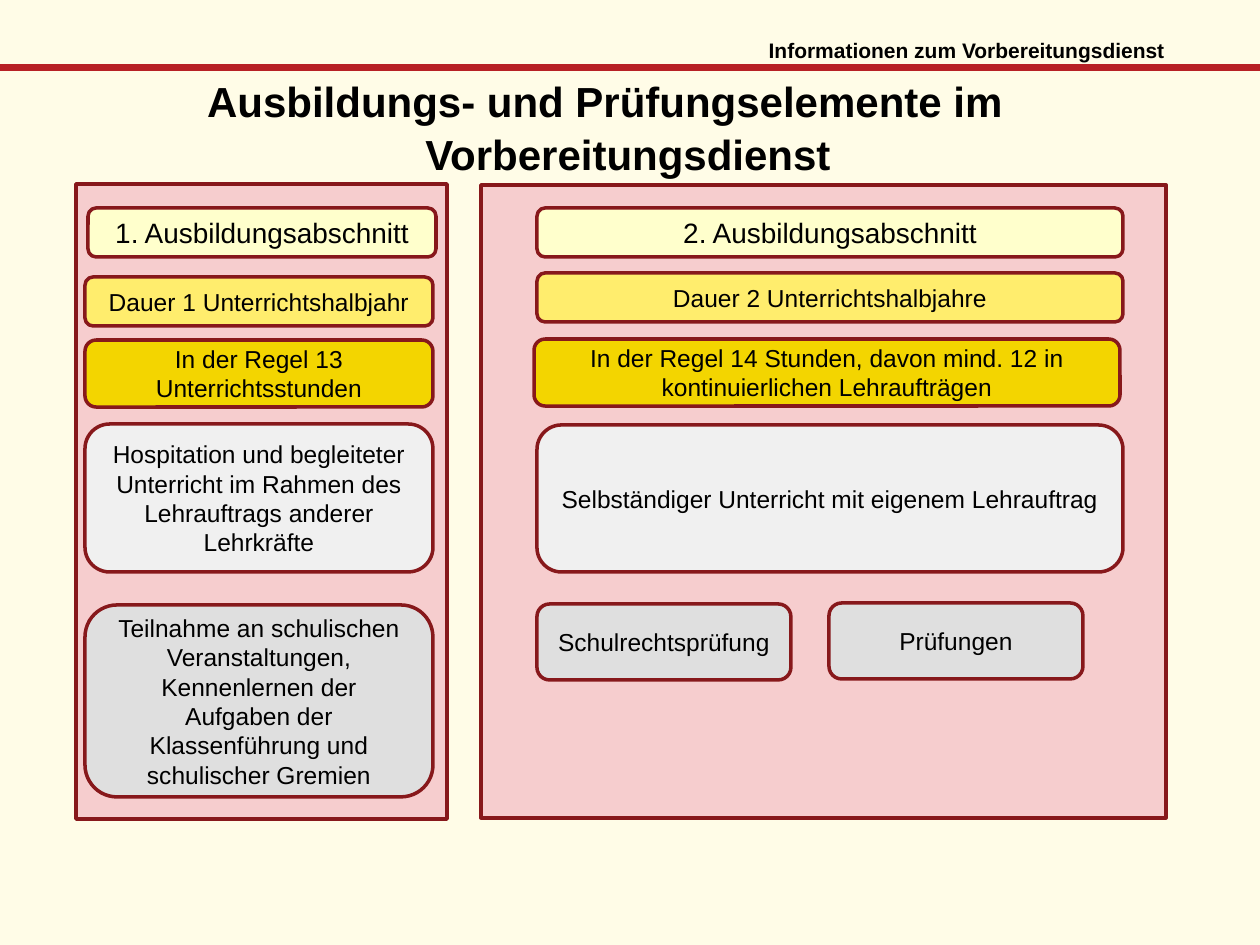
from dataclasses import dataclass

from pptx import Presentation
from pptx.dml.color import RGBColor
from pptx.enum.shapes import MSO_SHAPE
from pptx.enum.text import MSO_ANCHOR, PP_ALIGN
from pptx.util import Emu, Pt

EMU_PER_PX = 914400 / 126
COLORS = {
    "background": "FFFCE7",
    "rule": "B72025",
    "border": "87181B",
    "panel": "F6CDCE",
    "heading": "FFFFCC",
    "duration": "FFED6D",
    "hours": "F3D500",
    "teaching": "F0F0F0",
    "extra": "DFDFDF",
    "text": "000000",
}


@dataclass(frozen=True)
class Area:
    left: int
    top: int
    width: int
    height: int


@dataclass(frozen=True)
class Box:
    area: Area
    fill: str
    text: str = ""
    size: int = 14
    shape: MSO_SHAPE = MSO_SHAPE.ROUNDED_RECTANGLE
    border: str = "border"
    border_width: float = 2


@dataclass(frozen=True)
class Line:
    """A text line, with its left and right indents in px."""
    text: str
    left: int = 0
    right: int = 0


LEFT, RIGHT = 85, 537
NARROW, WIDE, EXAM = 348, 586, 254

BOXES = [
    Box(Area(0, 65, 1260, 5), "rule", shape=MSO_SHAPE.RECTANGLE, border="rule", border_width=0.75),
    Box(Area(481, 185, 685, 633), "panel", shape=MSO_SHAPE.RECTANGLE),
    Box(Area(76, 184, 371, 635), "panel", shape=MSO_SHAPE.RECTANGLE),
    Box(Area(88, 208, NARROW, 49), "heading", "1. Ausbildungsabschnitt", 16),
    Box(Area(RIGHT, 208, WIDE, 49), "heading", "2. Ausbildungsabschnitt", 16),
    Box(Area(LEFT, 277, NARROW, 49), "duration", "Dauer 1 Unterrichtshalbjahr"),
    Box(Area(RIGHT, 273, WIDE, 49), "duration", "Dauer 2 Unterrichtshalbjahre"),
    Box(Area(LEFT, 340, NARROW, 67), "hours", "In der Regel 13 Unterrichtsstunden"),
    Box(Area(534, 339, WIDE, 67), "hours",
        "In der Regel 14 Stunden, davon mind. 12 in kontinuierlichen Lehraufträgen"),
    Box(Area(LEFT, 424, NARROW, 148), "teaching",
        "Hospitation und begleiteter Unterricht im Rahmen des Lehrauftrags anderer Lehrkräfte"),
    Box(Area(RIGHT, 425, WIDE, 147), "teaching",
        "Selbständiger Unterricht mit eigenem Lehrauftrag"),
    Box(Area(LEFT, 605, NARROW, 192), "extra",
        "Teilnahme an schulischen Veranstaltungen, Kennenlernen der Aufgaben der "
        "Klassenführung und schulischer Gremien"),
    Box(Area(RIGHT, 604, EXAM, 76), "extra", "Schulrechtsprüfung"),
    Box(Area(829, 603, EXAM, 76), "extra", "Prüfungen"),
]


def px(length: int) -> Emu:
    return Emu(round(length * EMU_PER_PX))


def place(area: Area) -> tuple[Emu, ...]:
    return tuple(px(value) for value in (area.left, area.top, area.width, area.height))


def color(name: str) -> RGBColor:
    return RGBColor.from_string(COLORS[name])


def set_all(target, values: dict) -> None:
    for name, value in values.items():
        setattr(target, name, value)


def write(para, text: str, size: int, align: PP_ALIGN, bold: bool = False) -> None:
    para.alignment = align
    span = para.add_run()
    span.text = text
    set_all(span.font, {"name": "Arial", "size": Pt(size), "bold": bold})
    span.font.color.rgb = color("text")


def draw_box(page, box: Box) -> None:
    shape = page.shapes.add_shape(box.shape, *place(box.area))
    shape.shadow.inherit = False
    shape.fill.solid()
    shape.fill.fore_color.rgb = color(box.fill)
    shape.line.color.rgb = color(box.border)
    shape.line.width = Pt(box.border_width)
    if box.text:
        set_all(shape.text_frame, {"word_wrap": True, "vertical_anchor": MSO_ANCHOR.MIDDLE})
        write(shape.text_frame.paragraphs[0], box.text, box.size, PP_ALIGN.CENTER)


def draw_text(page, area: Area, lines: list[Line], size: int, align: PP_ALIGN, frame_format: dict) -> None:
    frame = page.shapes.add_textbox(*place(area)).text_frame
    set_all(frame, {"word_wrap": True, **frame_format})
    for index, line in enumerate(lines):
        para = frame.add_paragraph() if index else frame.paragraphs[0]
        if index:
            para.space_before = Pt(1.5)
        write(para, line.text, size, align, bold=True)
        for name, indent in (("marL", line.left), ("marR", line.right)):
            if indent:
                para._p.get_or_add_pPr().set(name, str(px(indent)))


def main() -> None:
    deck = Presentation()
    deck.slide_width, deck.slide_height = px(1260), px(945)
    page = deck.slides.add_slide(deck.slide_layouts[6])
    page.background.fill.solid()
    page.background.fill.fore_color.rgb = color("background")

    for box in BOXES:
        draw_box(page, box)

    title = [
        Line("Ausbildungs- und Prüfungselemente im", right=12),
        Line("Vorbereitungsdienst", left=46),
    ]
    draw_text(page, Area(44, 64, 1134, 59), title, 24, PP_ALIGN.CENTER, {"margin_top": px(11)})
    no_margins = {f"margin_{side}": 0 for side in ("left", "top", "right", "bottom")}
    draw_text(page, Area(333, 38, 832, 25), [Line("Informationen zum Vorbereitungsdienst")],
              12, PP_ALIGN.RIGHT, no_margins)
    deck.save("out.pptx")


if __name__ == "__main__":
    main()
